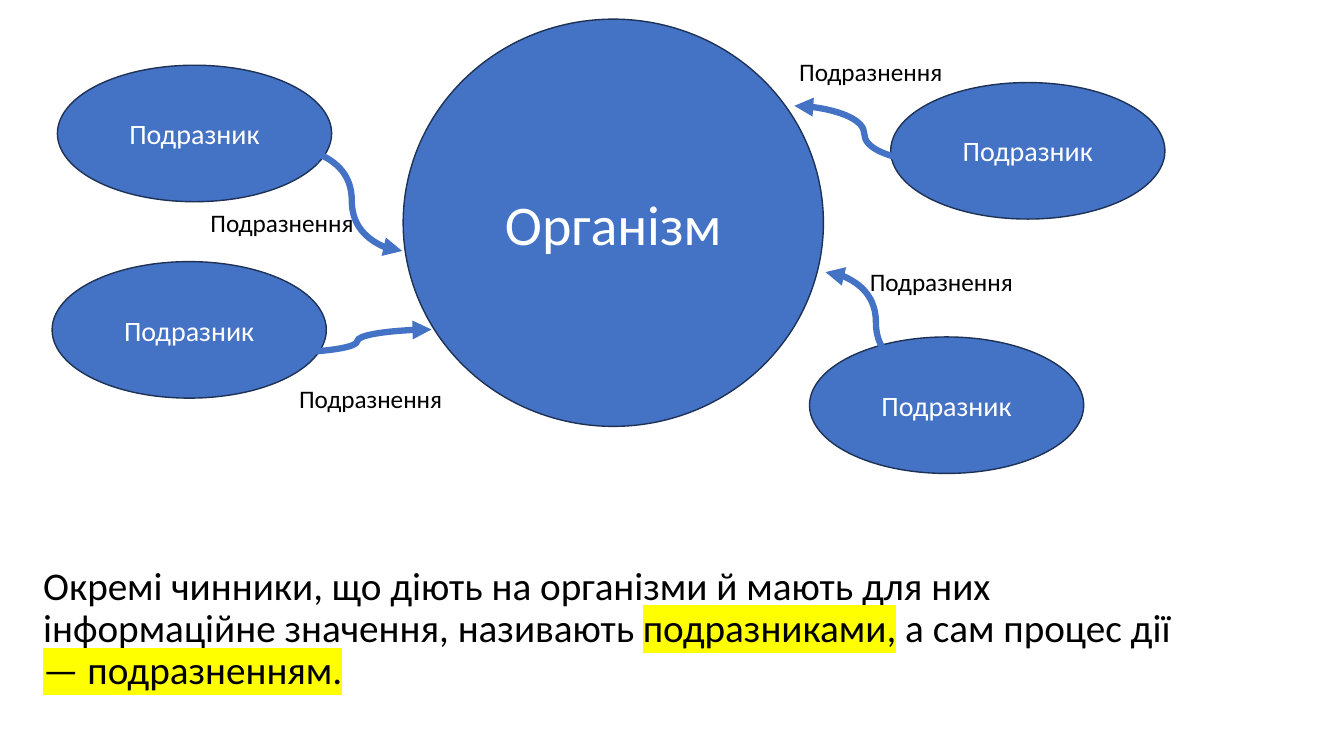
from lxml import etree
from pptx import Presentation
from pptx.dml.color import RGBColor
from pptx.enum.shapes import MSO_CONNECTOR, MSO_SHAPE
from pptx.enum.text import MSO_ANCHOR, PP_ALIGN
from pptx.oxml.ns import qn
from pptx.util import Pt

ELLIPSE = MSO_SHAPE.OVAL
CURVE = MSO_CONNECTOR.CURVE
MIDDLE = MSO_ANCHOR.MIDDLE
CENTER = PP_ALIGN.CENTER

BLUE = RGBColor(0x44, 0x72, 0xC4)
NAVY = RGBColor(0x1E, 0x32, 0x56)
WHITE = RGBColor(0xFF, 0xFF, 0xFF)
BLACK = RGBColor(0x00, 0x00, 0x00)
YELLOW = RGBColor(0xFF, 0xFF, 0x00)

FONT = "Calibri"
STIMULUS_SIZE = (195.9, 97.5)
LABEL_SIZE = (125.3, 29)

STIMULI = [(41, 46.6), (37.2, 186.9), (636.2, 59), (578.2, 240.7)]
ARROWS = [
    ((215.3, 107.3), (287.3, 179.3)),
    ((202.3, 252), (308.2, 235.4)),
    ((589.7, 194.4), (661.7, 266.4)),
    ((567.4, 75.6), (667.4, 115.9)),
]
LABELS = [(563.8, 36.7), (614.2, 186.5), (143.3, 144.7), (206.6, 270)]
DEFINITION = [
    ("Окремі чинники, що діють на організми й мають для них "
     "інформаційне значення, називають ", False),
    ("подразниками,", True),
    (" а сам процес дії ", False),
    ("— подразненням.", True),
]


def add_run(paragraph, text, size, color, highlighted=False):
    run = paragraph.add_run()
    run.text = text
    run.font.size = Pt(size)
    run.font.name = FONT
    run.font.color.rgb = color
    if highlighted:
        highlight = etree.Element(qn("a:highlight"))
        etree.SubElement(highlight, qn("a:srgbClr"), val=str(YELLOW))
        run.font.fill
        run._r.rPr.find(qn("a:solidFill")).addnext(highlight)


def add_ellipse(slide, position, size, text, font_size):
    shape = slide.shapes.add_shape(ELLIPSE, *map(Pt, position + size))
    shape.shadow.inherit = False
    shape.fill.solid()
    shape.fill.fore_color.rgb = BLUE
    shape.line.color.rgb = NAVY
    shape.line.width = Pt(1)
    shape.text_frame.vertical_anchor = MIDDLE
    paragraph = shape.text_frame.paragraphs[0]
    paragraph.alignment = CENTER
    add_run(paragraph, text, font_size, WHITE)


def add_curved_arrow(slide, start, end):
    connector = slide.shapes.add_connector(CURVE, *map(Pt, start + end))
    connector.line.color.rgb = BLUE
    connector.line.width = Pt(4.5)
    line = connector.line._get_or_add_ln()
    for tag in ("a:headEnd", "a:tailEnd"):
        etree.SubElement(line, qn(tag), type="triangle")
    etree.SubElement(connector._element.spPr, qn("a:effectLst"))


def add_text_box(slide, position, size):
    box = slide.shapes.add_textbox(*map(Pt, position + size))
    box.text_frame.word_wrap = True
    return box.text_frame.paragraphs[0]


def add_definition(slide):
    paragraph = add_text_box(slide, (23.8, 401), (828, 125))
    paragraph.line_spacing = 0.9
    paragraph.space_before = Pt(10)
    for text, highlighted in DEFINITION:
        add_run(paragraph, text, 28, BLACK, highlighted)


def main():
    presentation = Presentation()
    presentation.slide_width = Pt(960)
    presentation.slide_height = Pt(540)
    slide = presentation.slides.add_slide(presentation.slide_layouts[6])

    add_definition(slide)
    add_ellipse(slide, (288, 13.7), (300.2, 290.9), "Організм", 40)
    for position in STIMULI:
        add_ellipse(slide, position, STIMULUS_SIZE, "Подразник", 20)
    for start, end in ARROWS:
        add_curved_arrow(slide, start, end)
    for position in LABELS:
        paragraph = add_text_box(slide, position, LABEL_SIZE)
        add_run(paragraph, "Подразнення", 18, BLACK)

    presentation.save("out.pptx")


if __name__ == "__main__":
    main()
